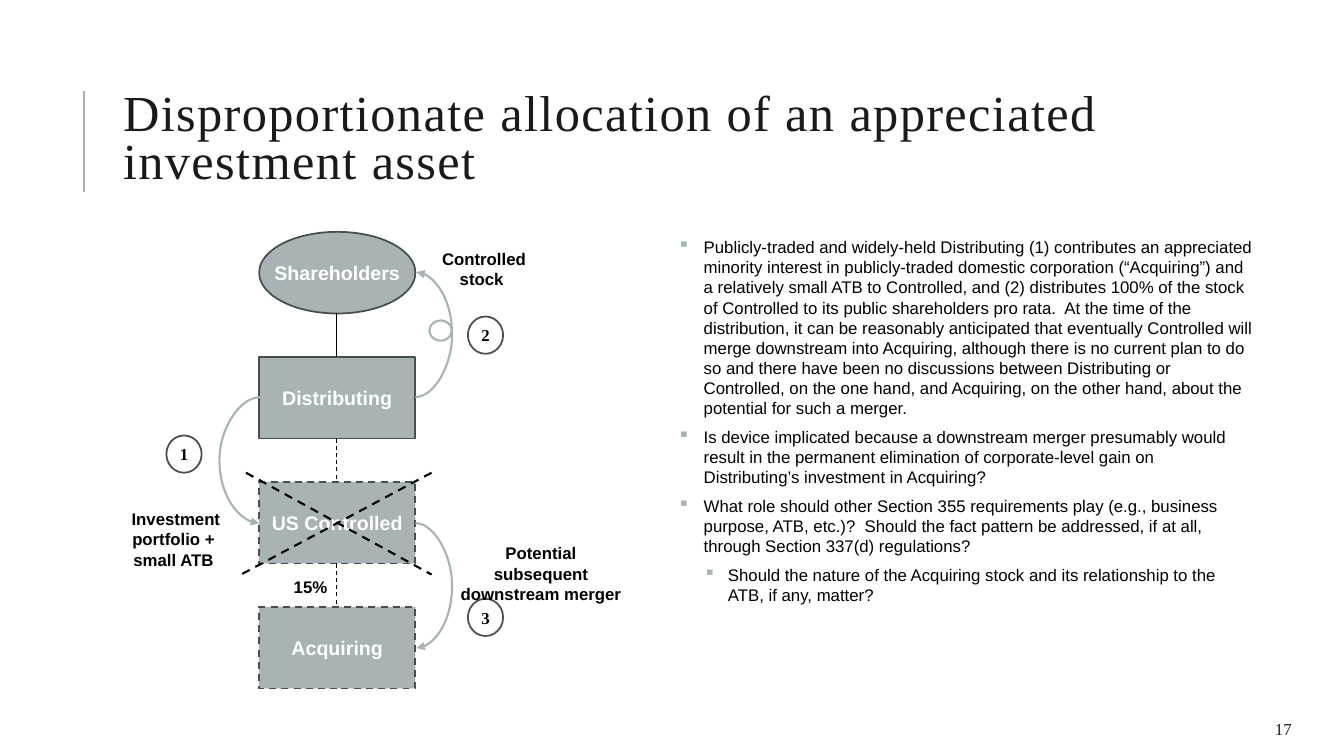
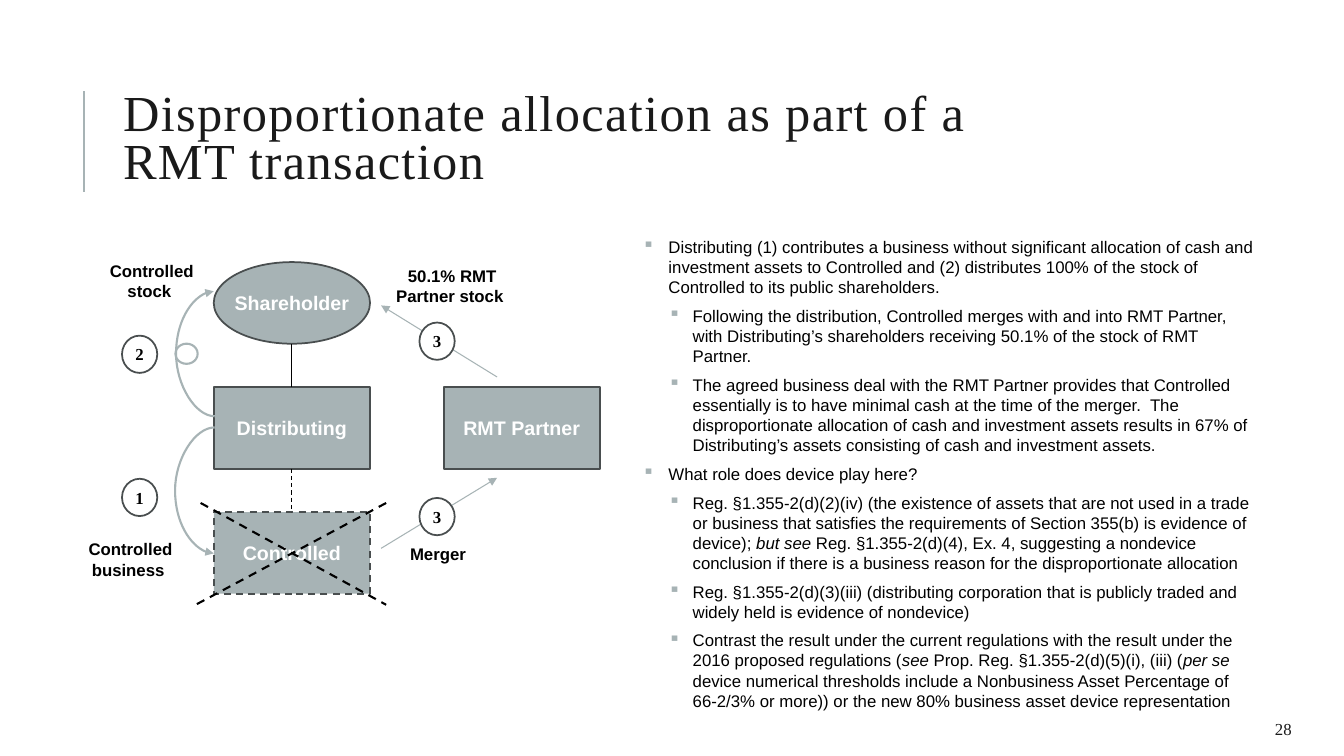
from dataclasses import dataclass
from typing import Optional

from lxml.etree import SubElement
from pptx import Presentation
from pptx.dml.color import RGBColor
from pptx.enum.dml import MSO_LINE
from pptx.enum.shapes import MSO_CONNECTOR as Wire, MSO_SHAPE as Form
from pptx.enum.text import MSO_ANCHOR as Anchor, MSO_AUTO_SIZE as AutoSize, PP_ALIGN as Align
from pptx.oxml.ns import qn
from pptx.util import Pt

PX = 9144
COLORS = {
    "accent": "A7B3B5",
    "outline": "494E4F",
    "ink": "1A1A1A",
    "black": "000000",
    "white": "FFFFFF",
}
SANS, SERIF = "Arial", "Times New Roman"
NODE_WIDTH, NODE_HEIGHT, NODE_PITCH = 155, 81, 124
BADGE_WIDTH, BADGE_HEIGHT = 35, 37
BULLET_INDENTS = [(26, -26), (50, -24)]


@dataclass(frozen=True)
class Node:
    text: str
    left: int
    top: int
    dashed: bool = False
    form: Form = Form.RECTANGLE


@dataclass(frozen=True)
class Link:
    x1: int
    y1: int
    x2: int
    y2: int
    color: str = "black"
    weight: float = 0.75
    dashed: bool = False
    arrow: bool = False
    bulge_x: Optional[int] = None


@dataclass(frozen=True)
class Badge:
    text: str
    left: int
    top: int


@dataclass(frozen=True)
class Label:
    lines: list[str]
    left: int
    top: int
    width: int
    height: int = 50


@dataclass(frozen=True)
class Bullet:
    text: str
    level: int = 0


@dataclass(frozen=True)
class Topic:
    title: str
    title_width: int
    number: str
    nodes: list[Node]
    links: list[Link]
    loop: tuple[int, int]
    badges: list[Badge]
    labels: list[Label]
    body_left: int
    bullets: list[Bullet]


def rgb(name: str) -> RGBColor:
    return RGBColor.from_string(COLORS[name])


def style_font(font, name: str, size: int, color: str, bold: bool = False) -> None:
    font.name, font.size, font.bold = name, Pt(size), bold
    font.color.rgb = rgb(color)


def style_line(line, color: str, weight: float, dashed: bool = False) -> None:
    line.color.rgb = rgb(color)
    line.width = Pt(weight)
    if dashed:
        line.dash_style = MSO_LINE.DASH


def add_box(page, left: int, top: int, width: int, height: int):
    box = page.shapes.add_textbox(left * PX, top * PX, width * PX, height * PX)
    box.text_frame.word_wrap = True
    return box.text_frame


def add_link(page, link: Link) -> None:
    kind = Wire.STRAIGHT if link.bulge_x is None else Wire.CURVE
    wire = page.shapes.add_connector(kind, link.x1 * PX, link.y1 * PX, link.x2 * PX, link.y2 * PX)
    style_line(wire.line, link.color, link.weight, link.dashed)
    properties = wire._element.spPr
    if link.arrow:
        SubElement(properties.find(qn("a:ln")), qn("a:tailEnd"), type="triangle")
    if link.bulge_x is not None:
        bend = round((link.bulge_x - link.x1) / (link.x2 - link.x1) * 100000)
        guides = properties.find(qn("a:prstGeom")).get_or_add_avLst()
        SubElement(guides, qn("a:gd"), name="adj1", fmla=f"val {bend}")
    SubElement(properties, qn("a:effectLst"))


def add_form(page, form: Form, left: int, top: int, width: int, height: int,
             fill: Optional[str], line: str, weight: float = 1.25, dashed: bool = False):
    shape = page.shapes.add_shape(form, left * PX, top * PX, width * PX, height * PX)
    shape.shadow.inherit = False
    if fill is None:
        shape.fill.background()
    else:
        shape.fill.solid()
        shape.fill.fore_color.rgb = rgb(fill)
    style_line(shape.line, line, weight, dashed)
    return shape


def write_centered(shape, text: str, font: str, size: int, color: str) -> None:
    frame = shape.text_frame
    frame.word_wrap = False
    frame.vertical_anchor = Anchor.MIDDLE
    para = frame.paragraphs[0]
    para.text = text
    para.alignment = Align.CENTER
    style_font(para.font, font, size, color, True)


def add_node(page, node: Node) -> None:
    shape = add_form(page, node.form, node.left, node.top, NODE_WIDTH, NODE_HEIGHT,
                     "accent", "outline", dashed=node.dashed)
    write_centered(shape, node.text, SANS, 14, "white")


def add_badge(page, badge: Badge) -> None:
    shape = add_form(page, Form.OVAL, badge.left, badge.top, BADGE_WIDTH, BADGE_HEIGHT,
                     "white", "outline")
    write_centered(shape, badge.text, SERIF, 12, "black")


def add_label(page, label: Label) -> None:
    frame = add_box(page, label.left, label.top, label.width, label.height)
    for index, line in enumerate(label.lines):
        para = frame.add_paragraph() if index else frame.paragraphs[0]
        para.text = line
        para.alignment = Align.CENTER
        style_font(para.font, SANS, 12, "black", True)


def add_body(page, left: int, bullets: list[Bullet]) -> None:
    frame = add_box(page, left, 230, 1250 - left, 481)
    frame.margin_left = frame.margin_right = 5 * PX
    for index, bullet in enumerate(bullets):
        para = frame.add_paragraph() if index else frame.paragraphs[0]
        para.level = bullet.level
        para.space_after = Pt(6)
        style_font(para.font, SANS, 12, "black")
        margin, indent = BULLET_INDENTS[bullet.level]
        properties = para._p.get_or_add_pPr()
        properties.set("marL", str(margin * PX))
        properties.set("indent", str(indent * PX))
        tint = SubElement(properties, qn("a:buClr"))
        SubElement(tint, qn("a:srgbClr"), val=COLORS["accent"])
        SubElement(properties, qn("a:buChar"), char="▪")
        properties.append(properties.find(qn("a:defRPr")))
        for position, piece in enumerate(bullet.text.split("*")):
            span = para.add_run()
            span.text = piece
            if position % 2:
                span.font.italic = True


def add_frame(page, topic: Topic) -> None:
    add_link(page, Link(83, 190, 83, 90, "accent", 1.5))
    title = page.shapes.title
    title.left, title.top = 112 * PX, 90 * PX
    title.width, title.height = topic.title_width * PX, 100 * PX
    frame = title.text_frame
    frame.word_wrap = True
    frame.auto_size = AutoSize.NONE
    frame.vertical_anchor = Anchor.MIDDLE
    para = frame.paragraphs[0]
    para.alignment = Align.LEFT
    para.line_spacing = 0.8
    span = para.add_run()
    span.text = topic.title
    style_font(span.font, SERIF, 36, "ink")
    span._r.get_or_add_rPr().set("spc", "100")
    number = add_box(page, 1185, 708, 106, 30)
    number.vertical_anchor = Anchor.MIDDLE
    para = number.paragraphs[0]
    para.text = topic.number
    para.alignment = Align.RIGHT
    style_font(para.font, SERIF, 12, "ink")


def column(left: int, top: int, names: list[str]) -> list[Node]:
    return [Node(name, left, top + index * NODE_PITCH, index > 1,
                 Form.RECTANGLE if index else Form.OVAL)
            for index, name in enumerate(names)]


def stems(nodes: list[Node]) -> list[Link]:
    return [Link(upper.left + 77, upper.top + NODE_HEIGHT, lower.left + 77, lower.top,
                 dashed=lower.dashed)
            for upper, lower in zip(nodes, nodes[1:])]


def cross(node: Node) -> list[Link]:
    left, right = node.left - 13, node.left + 171
    top, bottom = node.top - 9, node.top + 92
    return [Link(right, top, left - 5, bottom, weight=1.5, dashed=True),
            Link(left, top, right, bottom, weight=1.5, dashed=True)]


def arc(x1: int, y1: int, x2: int, y2: int, bulge_x: int) -> Link:
    return Link(x1, y1, x2, y2, "accent", 1.5, arrow=True, bulge_x=bulge_x)


def ray(x1: int, y1: int, x2: int, y2: int) -> Link:
    return Link(x1, y1, x2, y2, "accent", arrow=True)


ASSET_CHAIN = column(257, 230, ["Shareholders", "Distributing", "US Controlled", "Acquiring"])
MERGER_CHAIN = column(212, 260, ["Shareholder", "Distributing", "Controlled"])

TOPICS = [
    Topic(
        "Disproportionate allocation of an appreciated investment asset", 1130, "17",
        ASSET_CHAIN,
        stems(ASSET_CHAIN) + cross(ASSET_CHAIN[2]) + [
            arc(412, 394, 413, 270, 449),
            arc(258, 394, 257, 519, 217),
            arc(412, 519, 413, 643, 449),
        ],
        (426, 318),
        [Badge("1", 165, 432), Badge("2", 464, 314), Badge("3", 464, 594)],
        [
            Label(["Controlled stock "], 414, 242, 132),
            Label(["Investment portfolio + ", "small ATB "], 106, 500, 137, 71),
            Label(["15%"], 236, 567, 144, 30),
            Label(["Potential subsequent downstream merger"], 444, 534, 185),
        ],
        667,
        [
            Bullet("Publicly-traded and widely-held Distributing (1) contributes an appreciated minority interest in publicly-traded domestic corporation (“Acquiring”) and a relatively small ATB to Controlled, and (2) distributes 100% of the stock of Controlled to its public shareholders pro rata.  At the time of the distribution, it can be reasonably anticipated that eventually Controlled will merge downstream into Acquiring, although there is no current plan to do so and there have been no discussions between Distributing or Controlled, on the one hand, and Acquiring, on the other hand, about the potential for such a merger."),
            Bullet("Is device implicated because a downstream merger presumably would result in the permanent elimination of corporate-level gain on Distributing’s investment in Acquiring?"),
            Bullet("What role should other Section 355 requirements play (e.g., business purpose, ATB, etc.)?  Should the fact pattern be addressed, if at all, through Section 337(d) regulations?"),
            Bullet("Should the nature of the Acquiring stock and its relationship to the ATB, if any, matter?", 1),
        ],
    ),
    Topic(
        "Disproportionate allocation as part of a RMT transaction", 892, "28",
        MERGER_CHAIN + [Node("RMT Partner", 440, 384)],
        stems(MERGER_CHAIN) + cross(MERGER_CHAIN[2]) + [
            arc(213, 413, 212, 289, 174),
            arc(213, 424, 212, 549, 173),
            ray(493, 374, 378, 303),
            ray(378, 544, 493, 474),
        ],
        (174, 341),
        [Badge("1", 121, 475), Badge("2", 121, 333), Badge("3", 416, 320), Badge("3", 416, 494)],
        [
            Label(["Controlled stock "], 90, 254, 121),
            Label(["Controlled business "], 61, 530, 137),
            Label(["50.1% RMT Partner stock "], 371, 259, 155),
            Label(["Merger"], 366, 535, 137, 30),
        ],
        632,
        [
            Bullet("Distributing (1) contributes a business without significant allocation of cash and investment assets to Controlled and (2) distributes 100% of the stock of Controlled to its public shareholders."),
            Bullet("Following the distribution, Controlled merges with and into RMT Partner, with Distributing’s shareholders receiving 50.1% of the stock of RMT Partner.", 1),
            Bullet("The agreed business deal with the RMT Partner provides that Controlled essentially is to have minimal cash at the time of the merger.  The disproportionate allocation of cash and investment assets results in 67% of Distributing’s assets consisting of cash and investment assets.", 1),
            Bullet("What role does device play here?"),
            Bullet("Reg. §1.355-2(d)(2)(iv) (the existence of assets that are not used in a trade or business that satisfies the requirements of Section 355(b) is evidence of device); *but see* Reg. §1.355-2(d)(4), Ex. 4, suggesting a nondevice conclusion if there is a business reason for the disproportionate allocation", 1),
            Bullet("Reg. §1.355-2(d)(3)(iii) (distributing corporation that is publicly traded and widely held is evidence of nondevice)", 1),
            Bullet("Contrast the result under the current regulations with the result under the 2016 proposed regulations (*see* Prop. Reg. §1.355-2(d)(5)(i), (iii) (*per se* device numerical thresholds include a Nonbusiness Asset Percentage of 66-2/3% or more)) or the new 80% business asset device representation", 1),
        ],
    ),
]


def main() -> None:
    deck = Presentation()
    deck.slide_width, deck.slide_height = 1333 * PX, 750 * PX
    for topic in TOPICS:
        page = deck.slides.add_slide(deck.slide_layouts[5])
        add_frame(page, topic)
        for draw, items in ((add_node, topic.nodes), (add_link, topic.links),
                            (add_badge, topic.badges), (add_label, topic.labels)):
            for item in items:
                draw(page, item)
        add_form(page, Form.OVAL, *topic.loop, 22, 20, None, "accent", 1.5)
        add_body(page, topic.body_left, topic.bullets)
    deck.save("out.pptx")


if __name__ == "__main__":
    main()
